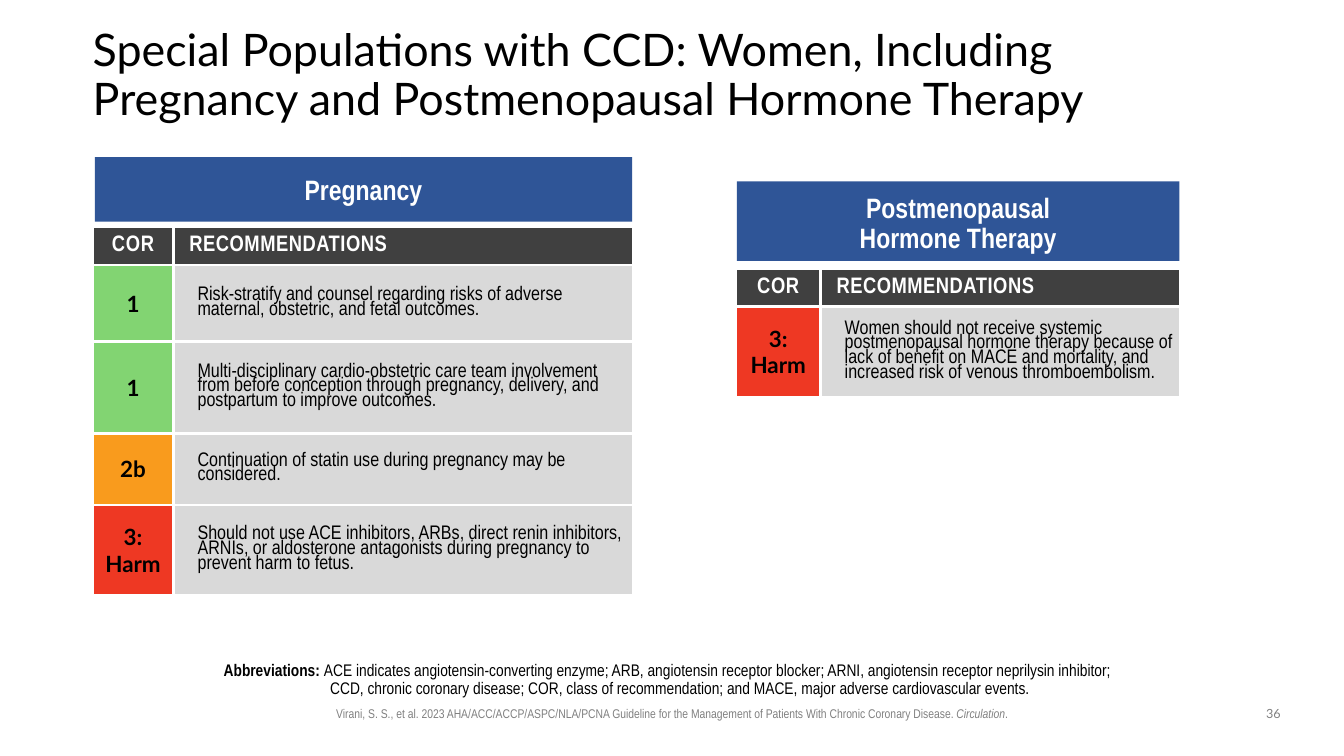
from dataclasses import dataclass
from typing import NamedTuple

from lxml.etree import SubElement
from pptx import Presentation
from pptx.dml.color import RGBColor
from pptx.enum.shapes import MSO_SHAPE as Shape
from pptx.enum.text import MSO_ANCHOR as Anchor, PP_ALIGN as Align
from pptx.oxml.ns import qn
from pptx.util import Emu, Inches, Pt

BLACK = RGBColor(0x00, 0x00, 0x00)
WHITE = RGBColor(0xFF, 0xFF, 0xFF)
GRAY = RGBColor(0x80, 0x80, 0x80)
DARK = RGBColor(0x40, 0x40, 0x40)
LIGHT = RGBColor(0xD9, 0xD9, 0xD9)
BLUE = RGBColor(0x2F, 0x55, 0x97)
GREEN = RGBColor(0x82, 0xD4, 0x72)
ORANGE = RGBColor(0xF9, 0x9B, 0x1D)
RED = RGBColor(0xEE, 0x38, 0x23)
CLASS_COLORS = {"1": GREEN, "2b": ORANGE, "3: Harm": RED}

NARROW, LATO = "Arial Narrow", "Lato"
WIDTH, HEIGHT = Inches(13.33), Inches(7.5)


class Box(NamedTuple):
    """Left, top, width and height in percent of the slide."""
    x: float
    y: float
    w: float
    h: float


class Run(NamedTuple):
    text: str
    size: float
    font: str = NARROW
    color: RGBColor = BLACK
    bold: bool = False
    italic: bool = False
    spacing: int = 0


class Rec(NamedTuple):
    cor: str
    text: str
    height: float


@dataclass
class Panel:
    heading: str
    bar: Box
    label: Box
    origin: tuple[float, float]
    columns: tuple[float, float]
    recs: list[Rec]


HEADER_HEIGHT = 5.07
PANELS = [
    Panel("Pregnancy", Box(7.05, 20.8, 39.98, 8.53), Box(7.05, 22.27, 39.98, 6.13),
          (6.9, 30), (6, 34.2), [
        Rec("1", "Risk-stratify and counsel regarding risks of adverse maternal, "
                 "obstetric, and fetal outcomes.", 10.13),
        Rec("1", "Multi-disciplinary cardio-obstetric care team involvement from before "
                 "conception through pregnancy, delivery, and postpartum to improve "
                 "outcomes.", 12.13),
        Rec("2b", "Continuation of statin use during pregnancy may be considered.", 9.47),
        Rec("3: Harm", "Should not use ACE inhibitors, ARBs, direct renin inhibitors, "
                       "ARNIs, or aldosterone antagonists during pregnancy to prevent "
                       "harm to fetus.", 12),
    ]),
    Panel("Postmenopausal\nHormone Therapy", Box(54.83, 24, 32.93, 10.53),
          Box(54.83, 23.87, 32.93, 11.6), (54.75, 35.47), (6.3, 26.78), [
        Rec("3: Harm", "Women should not receive systemic postmenopausal hormone therapy "
                       "because of lack of benefit on MACE and mortality, and increased "
                       "risk of venous thromboembolism.", 12),
    ]),
]


def across(share: float) -> Emu:
    return Emu(round(WIDTH * share / 100))


def down(share: float) -> Emu:
    return Emu(round(HEIGHT * share / 100))


def place(box: Box) -> tuple[Emu, Emu, Emu, Emu]:
    return across(box.x), down(box.y), across(box.w), down(box.h)


def apply(target, values: dict) -> None:
    for name, value in values.items():
        setattr(target, name, value)


def write(p, runs: list[Run], **layout) -> None:
    apply(p, layout)
    for run in runs:
        for i, line in enumerate(run.text.split("\n")):
            if i:
                p.add_line_break()
            r = p.add_run()
            r.text = line
            apply(r.font, {"size": Pt(run.size), "name": run.font,
                           "bold": run.bold, "italic": run.italic})
            r.font.color.rgb = run.color
            if run.spacing:
                r.font._element.set("spc", str(run.spacing))


def indent(p, left: float, first: float = 0) -> None:
    pPr = p._p.get_or_add_pPr()
    pPr.set("marL", str(Inches(left)))
    pPr.set("indent", str(Inches(first)))


def add_text(s, box: Box, runs: list[Run], anchor=Anchor.MIDDLE,
             margins=(0, 0, 0, 0), **layout):
    tf = s.shapes.add_textbox(*place(box)).text_frame
    sides = ("margin_left", "margin_top", "margin_right", "margin_bottom")
    apply(tf, {"word_wrap": True, "vertical_anchor": anchor,
               **{side: Inches(m) for side, m in zip(sides, margins)}})
    p = tf.paragraphs[0]
    write(p, runs, **layout)
    return p


def style_cell(cell, fill: RGBColor, margin: float | None = None) -> None:
    cell.vertical_anchor = Anchor.MIDDLE
    if margin is not None:
        for side in ("left", "top", "right", "bottom"):
            setattr(cell, f"margin_{side}", Inches(margin))
    tcPr = cell._tc.get_or_add_tcPr()
    for edge in ("lnL", "lnR", "lnT", "lnB"):
        ln = SubElement(tcPr, qn(f"a:{edge}"), w=str(Pt(2.25)))
        SubElement(SubElement(ln, qn("a:solidFill")), qn("a:srgbClr"), val=str(WHITE))
    cell.fill.solid()
    cell.fill.fore_color.rgb = fill


def add_panel(s, panel: Panel) -> None:
    # Heading bar
    bar = s.shapes.add_shape(Shape.RECTANGLE, *place(panel.bar))
    bar.shadow.inherit = False
    bar.fill.solid()
    bar.fill.fore_color.rgb = BLUE
    bar.line.fill.background()
    add_text(s, panel.label, [Run(panel.heading, 20, color=WHITE, bold=True)],
             alignment=Align.CENTER, line_spacing=0.9)

    # Table frame
    heights = [HEADER_HEIGHT] + [rec.height for rec in panel.recs]
    frame = Box(*panel.origin, sum(panel.columns), sum(heights))
    table = s.shapes.add_table(len(heights), 2, *place(frame)).table
    for column, width in zip(table.columns, panel.columns):
        column.width = across(width)
    for row, height in zip(table.rows, heights):
        row.height = down(height)

    # Header row
    for i, (title, spacing) in enumerate((("COR", 50), ("RECOMMENDATIONS", 40))):
        cell = table.cell(0, i)
        style_cell(cell, DARK)
        p = cell.text_frame.paragraphs[0]
        if i:
            indent(p, 0.06)
        write(p, [Run(title, 16, color=WHITE, bold=True, spacing=spacing)],
              alignment=Align.LEFT if i else Align.CENTER)

    # Recommendation rows
    for i, rec in enumerate(panel.recs, 1):
        cor, advice = table.cell(i, 0), table.cell(i, 1)
        style_cell(cor, CLASS_COLORS[rec.cor], 0.05)
        write(cor.text_frame.paragraphs[0], [Run(rec.cor, 16, LATO, bold=True)],
              alignment=Align.CENTER)
        style_cell(advice, LIGHT, 0.05)
        p = advice.text_frame.paragraphs[0]
        indent(p, 0.19)
        write(p, [Run(rec.text, 14)], line_spacing=0.8, space_after=Pt(6))


def main() -> None:
    prs = Presentation()
    prs.slide_width, prs.slide_height = WIDTH, HEIGHT
    s = prs.slides.add_slide(prs.slide_layouts[6])

    # Title
    add_text(s, Box(6.9, 5.33, 86.27, 9.6),
             [Run("Special Populations with CCD: Women, Including Pregnancy and "
                  "Postmenopausal Hormone Therapy", 32, LATO)], line_spacing=0.9)

    # Recommendation panels
    for panel in PANELS:
        add_panel(s, panel)

    # Abbreviations
    p = add_text(s, Box(15.98, 86.93, 68.12, 5.07), [
        Run("Abbreviations: ", 12, bold=True),
        Run("ACE indicates angiotensin-converting enzyme; ARB, angiotensin receptor "
            "blocker; ARNI, angiotensin receptor neprilysin inhibitor; CCD, chronic "
            "coronary disease; COR, class of recommendation; and MACE, major adverse "
            "cardiovascular events.", 12),
    ], Anchor.TOP, (0, 0.05, 0.1, 0.05), alignment=Align.CENTER, line_spacing=0.9)
    indent(p, 0.25, -0.25)

    # Citation and slide number
    small = {"anchor": Anchor.TOP, "margins": (0.1, 0.05, 0.1, 0.05),
             "alignment": Align.CENTER}
    add_text(s, Box(22.06, 92.67, 55.89, 3.33), [
        Run("Virani, S. S., et al. 2023 AHA/ACC/ACCP/ASPC/NLA/PCNA Guideline for the "
            "Management of Patients With Chronic Coronary Disease. ", 9, color=GRAY),
        Run("Circulation", 9, color=GRAY, italic=True),
        Run(".", 9, color=GRAY),
    ], **small)
    add_text(s, Box(93.17, 92.67, 3.15, 3.47), [Run("36", 9, LATO, GRAY)], **small)

    prs.save("out.pptx")


if __name__ == "__main__":
    main()
